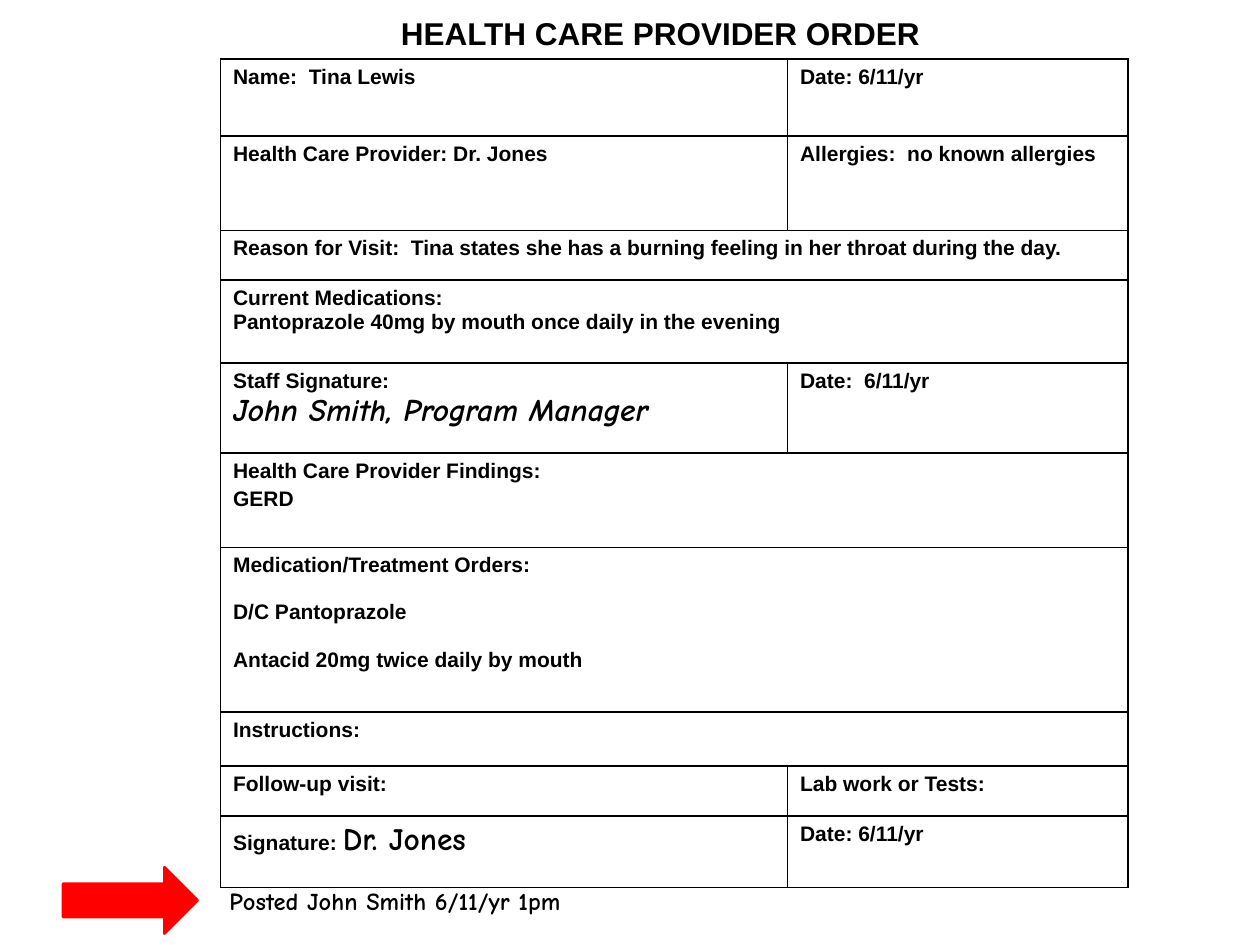
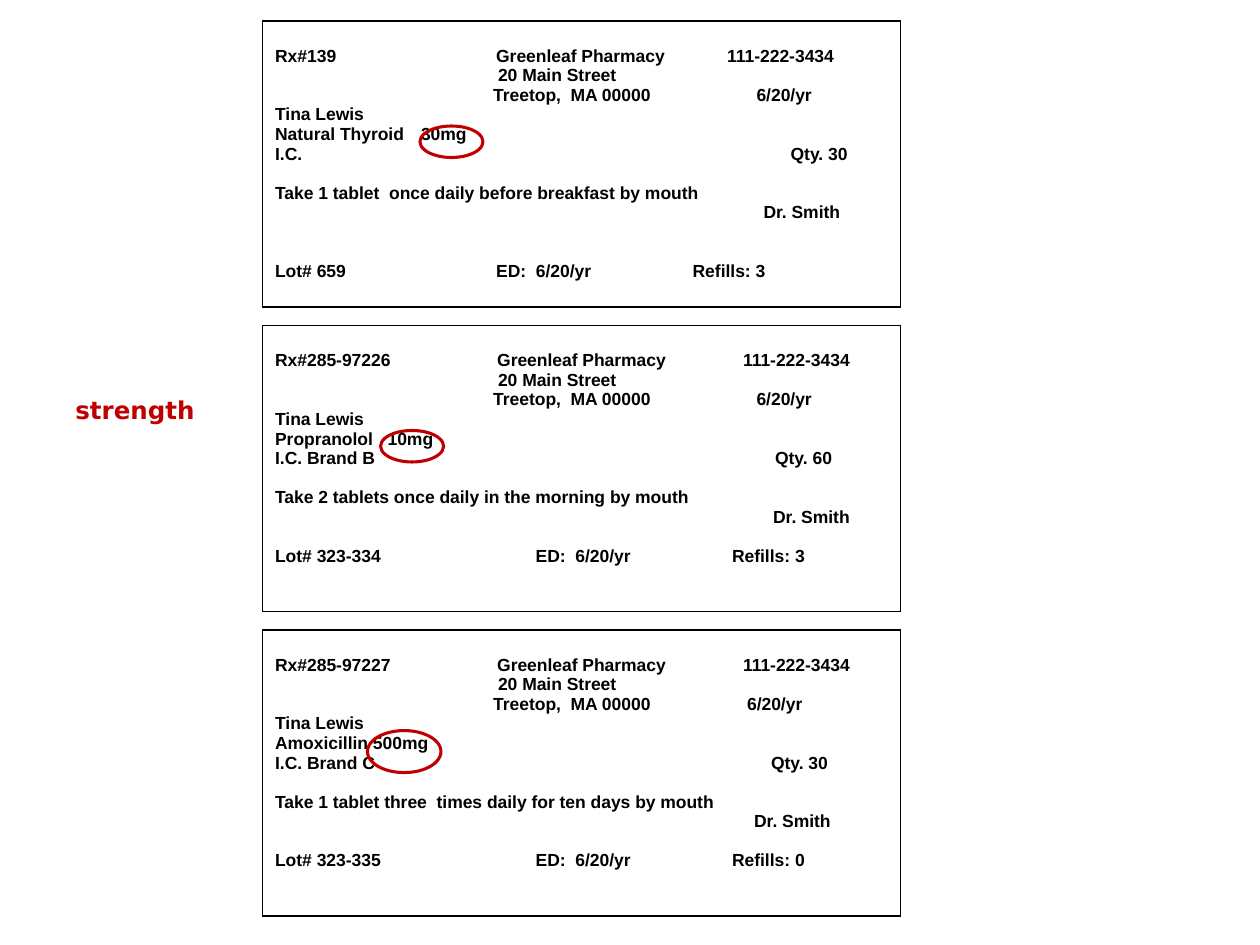
from lxml import etree
from pptx import Presentation
from pptx.dml.color import RGBColor
from pptx.enum import shapes
from pptx.oxml import ns
from pptx.util import Pt

COLORS = {"ink": "000000", "arrow": "FF0000", "strength": "C00000"}
BODY, HAND, LABEL = "Arial", "Comic Neue", "DejaVu Sans"


def add_run(paragraph, words, size, face=BODY, color="ink", italic=False):
    run = paragraph.add_run()
    run.text = words
    font = run.font
    font.size, font.name, font.bold, font.italic = Pt(size), face, True, italic
    font.color.rgb = RGBColor.from_string(COLORS[color])


def add_grid(slide, left, top, widths, heights):
    """Add an unfilled table with thin black rules around every cell."""
    grid = slide.shapes.add_table(len(heights), len(widths), Pt(left), Pt(top),
                                  Pt(sum(widths)), Pt(sum(heights))).table
    grid.first_row = grid.horz_banding = False
    for column, width in zip(grid.columns, widths):
        column.width = Pt(width)
    for row, height in zip(grid.rows, heights):
        row.height = Pt(height)
    for cell in grid.iter_cells():
        cell.fill.background()
        properties = cell._tc.get_or_add_tcPr()
        for position, side in enumerate(("lnL", "lnR", "lnT", "lnB")):
            border = etree.Element(ns.qn(f"a:{side}"), w=str(Pt(1)))
            fill = etree.SubElement(border, ns.qn("a:solidFill"))
            etree.SubElement(fill, ns.qn("a:srgbClr"), val=COLORS["ink"])
            properties.insert(position, border)
    return grid


deck = Presentation()
deck.slide_width, deck.slide_height = Pt(720), Pt(540)
order_slide = deck.slides.add_slide(deck.slide_layouts[6])
labels_slide = deck.slides.add_slide(deck.slide_layouts[6])

# Provider order form: row height, then one or two cells.
# A cell is a list of lines: (space before, text, signature).
order_rows = [
    (44, [(0, "Name:  Tina Lewis", "")], [(0, "Date: 6/11/yr", "")]),
    (54, [(0, "Health Care Provider: Dr. Jones", "")],
     [(0, "Allergies:  no known allergies", "")]),
    (28.5, [(0, "Reason for Visit:  Tina states she has a burning feeling "
                "in her throat during the day.", "")]),
    (47.5, [(0, "Current Medications:", ""),
            (0, "Pantoprazole 40mg by mouth once daily in the evening", "")]),
    (51.3, [(0, "Staff Signature:", ""), (0, "", "John Smith, Program Manager")],
     [(0, "Date:  6/11/yr", "")]),
    (54, [(0, "Health Care Provider Findings:", ""), (2.4, "GERD", "")]),
    (94, [(0, "Medication/Treatment Orders:", ""),
          (13.5, "D/C Pantoprazole", ""),
          (13.5, "Antacid 20mg twice daily by mouth", "")]),
    (31, [(0, "Instructions:", "")]),
    (28.5, [(0, "Follow-up visit:", "")], [(0, "Lab work or Tests:", "")]),
    (41, [(0, "Signature: ", "Dr. Jones")], [(0, "Date: 6/11/yr", "")]),
]
order_form = add_grid(order_slide, 126, 33.6, [324, 194.5],
                      [row[0] for row in order_rows])
for row_number, (_, *entries) in enumerate(order_rows):
    if len(entries) == 1:
        order_form.cell(row_number, 0).merge(order_form.cell(row_number, 1))
    for column_number, lines in enumerate(entries):
        frame = order_form.cell(row_number, column_number).text_frame
        for number, (gap, words, signature) in enumerate(lines):
            paragraph = frame.add_paragraph() if number else frame.paragraphs[0]
            if gap:
                paragraph.space_before = Pt(gap)
            if words:
                add_run(paragraph, words, 12)
            if signature:
                add_run(paragraph, signature, 18, HAND, italic=not words)

# Pharmacy labels: each line is (blank lines above, [(tab stop, text), ...])
LINE = 11.2
pharmacy_labels = [
    [(0, [(0, "Rx#139"), (126.3, "Greenleaf Pharmacy"), (258.3, "111-222-3434")]),
     (0, [(127.4, "20 Main Street")]),
     (0, [(124.6, "Treetop,  MA 00000"), (275.1, "6/20/yr")]),
     (0, [(0, "Tina Lewis")]),
     (0, [(0, "Natural Thyroid"), (83.4, "30mg")]),
     (0, [(0, "I.C."), (294.6, "Qty. 30")]),
     (1, [(0, "Take 1 tablet  once daily before breakfast by mouth")]),
     (0, [(279.1, "Dr. Smith")]),
     (2, [(0, "Lot# 659"), (126.3, "ED:  6/20/yr"), (238.6, "Refills: 3")])],
    [(0, [(0, "Rx#285-97226"), (126.9, "Greenleaf Pharmacy"), (267.4, "111-222-3434")]),
     (0, [(127.4, "20 Main Street")]),
     (0, [(124.6, "Treetop,  MA 00000"), (275.1, "6/20/yr")]),
     (0, [(0, "Tina Lewis")]),
     (0, [(0, "Propranolol"), (64.3, "10mg")]),
     (0, [(0, "I.C. Brand B"), (285.7, "Qty. 60")]),
     (1, [(0, "Take 2 tablets once daily in the morning by mouth")]),
     (0, [(284.6, "Dr. Smith")]),
     (1, [(0, "Lot# 323-334"), (148.9, "ED:  6/20/yr"), (261.1, "Refills: 3")])],
    [(0, [(0, "Rx#285-97227"), (126.9, "Greenleaf Pharmacy"), (267.4, "111-222-3434")]),
     (0, [(127.4, "20 Main Street")]),
     (0, [(124.6, "Treetop,  MA 00000"), (269.7, "6/20/yr")]),
     (0, [(0, "Tina Lewis")]),
     (0, [(0, "Amoxicillin 500mg")]),
     (0, [(0, "I.C. Brand C"), (283.4, "Qty. 30")]),
     (1, [(0, "Take 1 tablet three  times daily for ten days by mouth")]),
     (0, [(273.7, "Dr. Smith")]),
     (1, [(0, "Lot# 323-335"), (148.9, "ED:  6/20/yr"), (261.1, "Refills: 0")])],
]
for label_number, lines in enumerate(pharmacy_labels):
    label = add_grid(labels_slide, 150, 12 + 174 * label_number, [364.5], [163.5])
    cell = label.cell(0, 0)
    cell.margin_top = Pt(3.4 + LINE)
    for number, (blank_lines, pieces) in enumerate(lines):
        frame = cell.text_frame
        paragraph = frame.add_paragraph() if number else frame.paragraphs[0]
        stops = [stop for stop, _ in pieces if stop]
        if stops:
            tab_list = etree.SubElement(paragraph._p.get_or_add_pPr(), ns.qn("a:tabLst"))
            for stop in stops:
                etree.SubElement(tab_list, ns.qn("a:tab"), pos=str(Pt(stop)), algn="l")
        if blank_lines:
            paragraph.space_before = Pt(blank_lines * LINE)
        for stop, words in pieces:
            add_run(paragraph, "\t" + words if stop else words, 10)

# Title, posting note and callout word
captions = [
    (order_slide, "HEALTH CARE PROVIDER ORDER", (222, 4.5, 360, 29), 18, BODY, "ink"),
    (order_slide, "Posted John Smith 6/11/yr 1pm", (124, 502.5, 414, 24.5), 14, HAND, "ink"),
    (labels_slide, "strength", (36, 222, 84, 24.5), 14, LABEL, "strength"),
]
for slide, words, box, size, face, color in captions:
    frame = slide.shapes.add_textbox(*map(Pt, box)).text_frame
    frame.word_wrap = True
    add_run(frame.paragraphs[0], words, size, face, color)

# Arrow to the posting note, and rings around the strengths
ARROW, RING = shapes.MSO_SHAPE.RIGHT_ARROW, shapes.MSO_SHAPE.OVAL
markers = [
    (order_slide, ARROW, (36, 495.5, 77, 38), "arrow", 1.5),
    (labels_slide, RING, (240, 72, 36, 18), "strength", 1.75),
    (labels_slide, RING, (217.5, 246, 36, 18), "strength", 1.75),
    (labels_slide, RING, (210, 417.5, 42, 24), "strength", 1.75),
]
for slide, kind, box, color, weight in markers:
    marker = slide.shapes.add_shape(kind, *map(Pt, box))
    marker.shadow.inherit = False
    marker.line.color.rgb = RGBColor.from_string(COLORS[color])
    marker.line.width = Pt(weight)
    if kind == ARROW:
        marker.fill.solid()
        marker.fill.fore_color.rgb = RGBColor.from_string(COLORS[color])
    else:
        marker.fill.background()

deck.save("out.pptx")
